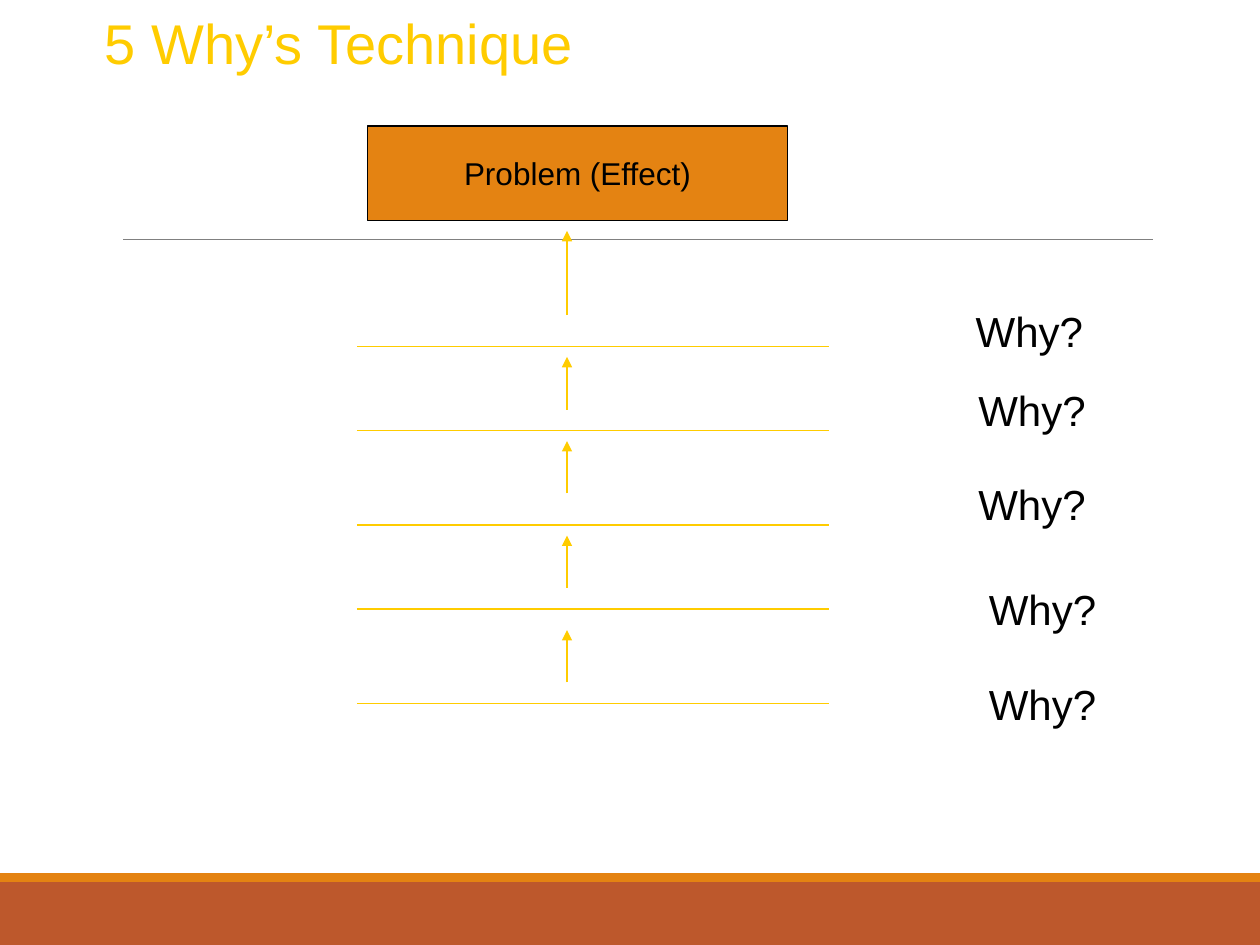
from pptx import Presentation
from pptx.dml.color import RGBColor
from pptx.enum import shapes, text
from pptx.oxml.ns import qn
from pptx.util import Pt
from lxml import etree

BLACK = RGBColor(0x00, 0x00, 0x00)
GRAY = RGBColor(0x80, 0x80, 0x80)
YELLOW = RGBColor(0xFF, 0xCC, 0x00)
ORANGE = RGBColor(0xE4, 0x83, 0x12)
RUST = RGBColor(0xBD, 0x58, 0x2C)

TITLE = "5 Why’s Technique"
PROBLEM = "Problem (Effect)"
QUESTION = "Why?"
FOOTER_BANDS = [(504, 36, RUST), (499, 5, ORANGE)]
LEVELS = [
    {"answer_y": 198, "arrow": (180, 132), "question": (550.5, 171)},
    {"answer_y": 246, "arrow": (234, 204), "question": (552, 216)},
    {"answer_y": 300, "arrow": (282, 252), "question": (552, 270)},
    {"answer_y": 348, "arrow": (336, 306), "question": (558, 330)},
    {"answer_y": 402, "arrow": (390, 360), "question": (558, 384)},
]
ANSWER_LEFT, ANSWER_RIGHT = 204, 474
ARROW_X = 324

deck = Presentation()
deck.slide_width, deck.slide_height = Pt(720), Pt(540)
slide = deck.slides.add_slide(deck.slide_layouts[6])


def write(shape, words, size, color):
    frame = shape.text_frame
    frame.word_wrap = False
    paragraph = frame.paragraphs[0]
    paragraph.text = words
    paragraph.font.size = Pt(size)
    paragraph.font.name = "Arial"
    paragraph.font.color.rgb = color
    return frame, paragraph


def add_label(left, top, width, height, words, size, color):
    label = slide.shapes.add_textbox(Pt(left), Pt(top), Pt(width), Pt(height))
    frame, _ = write(label, words, size, color)
    frame.auto_size = text.MSO_AUTO_SIZE.SHAPE_TO_FIT_TEXT


def add_box(left, top, width, height, fill):
    box = slide.shapes.add_shape(
        shapes.MSO_SHAPE.RECTANGLE, Pt(left), Pt(top), Pt(width), Pt(height))
    box.shadow.inherit = False
    box.fill.solid()
    box.fill.fore_color.rgb = fill
    box.line.fill.background()
    return box


def add_line(x1, y1, x2, y2, color=YELLOW, weight=0.75, arrow=False):
    line = slide.shapes.add_connector(
        shapes.MSO_CONNECTOR.STRAIGHT, Pt(x1), Pt(y1), Pt(x2), Pt(y2))
    line.line.color.rgb = color
    line.line.width = Pt(weight)
    properties = line._element.spPr
    if arrow:
        outline = properties.find(qn("a:ln"))
        etree.SubElement(outline, qn("a:tailEnd"), type="triangle")
    etree.SubElement(properties, qn("a:effectLst"))


for top, height, color in FOOTER_BANDS:
    add_box(0, top, 720, height, color)
add_line(70.5, 137, 659, 137, GRAY, 0.5)

problem = add_box(210, 72, 240, 54, ORANGE)
problem.line.color.rgb = BLACK
problem.line.width = Pt(0.75)
frame, paragraph = write(problem, PROBLEM, 18, BLACK)
frame.vertical_anchor = text.MSO_ANCHOR.MIDDLE
paragraph.alignment = text.PP_ALIGN.CENTER

add_label(52.8, 1.5, 286.5, 45.5, TITLE, 32, YELLOW)

for level in LEVELS:
    answer_y = level["answer_y"]
    start, end = level["arrow"]
    add_line(ANSWER_LEFT, answer_y, ANSWER_RIGHT, answer_y)
    add_line(ARROW_X, start, ARROW_X, end, arrow=True)
    add_label(*level["question"], 77, 36, QUESTION, 24, BLACK)

deck.save("out.pptx")
